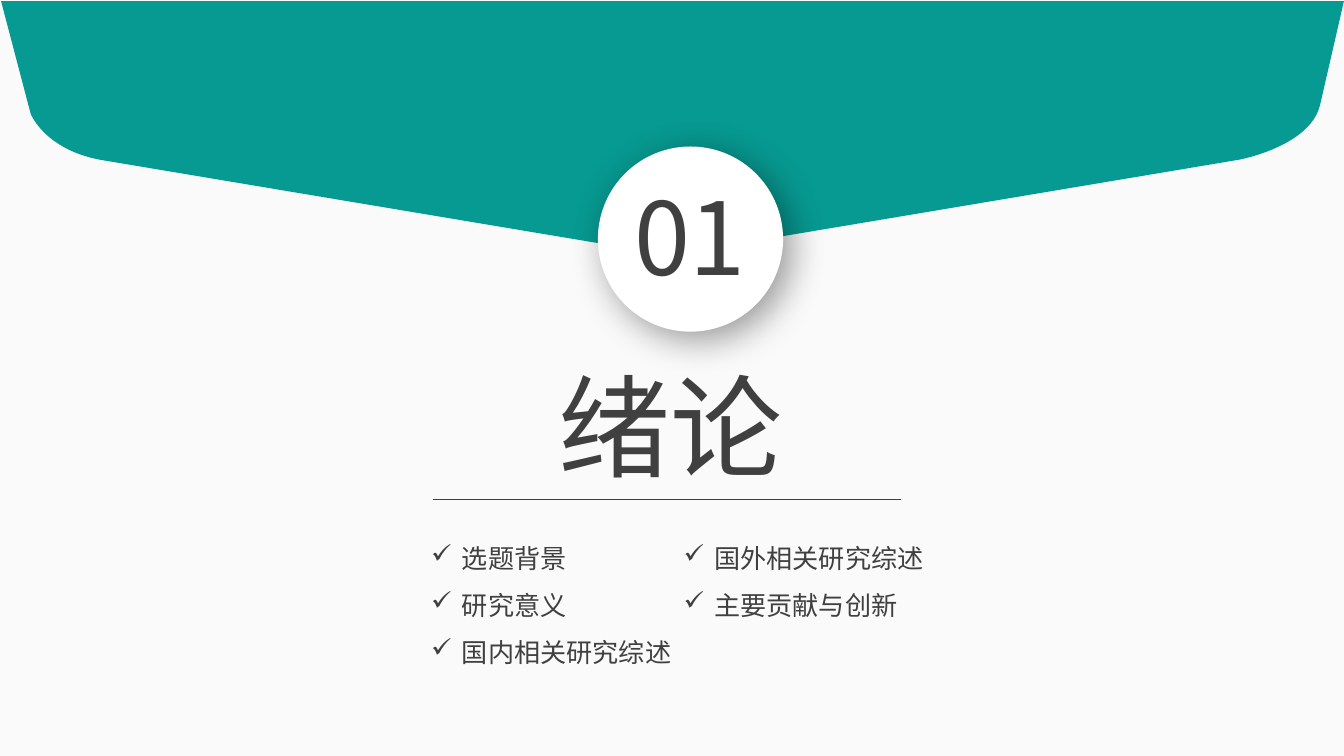
from dataclasses import dataclass

from lxml.etree import SubElement
from pptx import Presentation
from pptx.dml.color import RGBColor
from pptx.enum.shapes import MSO_CONNECTOR, MSO_SHAPE
from pptx.enum.text import MSO_AUTO_SIZE, PP_ALIGN
from pptx.oxml.ns import qn
from pptx.slide import Slide
from pptx.util import Cm, Pt

TEAL = RGBColor(0x07, 0x9A, 0x92)
WHITE = RGBColor(0xFF, 0xFF, 0xFF)
DARK_GREY = RGBColor(0x40, 0x40, 0x40)
PALE_GREY = RGBColor(0xFA, 0xFA, 0xFA)
FONT_NAME = "Noto Sans CJK SC"

Point = tuple[float, float]


@dataclass(frozen=True)
class Box:
    """Position and size in centimetres."""
    left: float
    top: float
    width: float
    height: float


@dataclass(frozen=True)
class TopicList:
    box: Box
    topics: tuple[str, ...]


@dataclass(frozen=True)
class RoundedCorner:
    """A curve that leaves its start straight towards the control point."""
    start: Point
    control: Point
    end: Point


TOPIC_LISTS = (
    TopicList(Box(7.9, 9.83, 5.16, 2.95), ("选题背景", "研究意义", "国内相关研究综述")),
    TopicList(Box(12.67, 9.83, 5.16, 2.06), ("国外相关研究综述", "主要贡献与创新")),
)
BANNER_TOP_LEFT = (0.02, 0.02)
BANNER_TOP_RIGHT = (25.4, 0.02)
BANNER_CORNERS = (
    RoundedCorner((0.58, 2.15), (0.86, 2.87), (2.0, 3.04)),
    RoundedCorner((11.5, 4.63), (12.58, 4.82), (13.82, 4.63)),
    RoundedCorner((23.42, 3.02), (24.77, 2.77), (24.95, 1.98)),
)


def corner_points(corner: RoundedCorner, steps: int = 24) -> list[Point]:
    """Sample a cubic curve whose first control point is its start."""
    points = []
    for step in range(steps + 1):
        t = step / steps
        weights = ((1 - t) ** 3 + 3 * t * (1 - t) ** 2, 3 * t**2 * (1 - t), t**3)
        anchors = (corner.start, corner.control, corner.end)
        points.append((
            sum(weight * anchor[0] for weight, anchor in zip(weights, anchors)),
            sum(weight * anchor[1] for weight, anchor in zip(weights, anchors)),
        ))
    return points


def add_banner(slide: Slide) -> None:
    points = [point for corner in BANNER_CORNERS for point in corner_points(corner)]
    points.append(BANNER_TOP_RIGHT)
    builder = slide.shapes.build_freeform(*(Cm(value) for value in BANNER_TOP_LEFT))
    builder.add_line_segments([(Cm(x), Cm(y)) for x, y in points], close=True)
    shape = builder.convert_to_shape()
    shape.shadow.inherit = False
    shape.fill.solid()
    shape.fill.fore_color.rgb = TEAL
    shape.line.fill.background()


def add_number_disc(slide: Slide, left: float, top: float, diameter: float) -> None:
    shape = slide.shapes.add_shape(
        MSO_SHAPE.OVAL, Cm(left), Cm(top), Cm(diameter), Cm(diameter))
    shape.fill.solid()
    shape.fill.fore_color.rgb = WHITE
    shape.line.fill.background()
    # Soft shadow towards the lower right
    shape.shadow.inherit = False
    effects = shape._element.spPr.find(qn("a:effectLst"))
    shadow = SubElement(
        effects, qn("a:outerShdw"), blurRad=str(Pt(20)), dist=str(Pt(6)),
        dir=str(45 * 60000), algn="tl", rotWithShape="0")
    color = SubElement(shadow, qn("a:srgbClr"), val="000000")
    SubElement(color, qn("a:alpha"), val="40000")


def add_text(
    slide: Slide,
    box: Box,
    *lines: str,
    size: int,
    alignment: PP_ALIGN = PP_ALIGN.LEFT,
    wrap: bool = True,
    line_spacing: float | None = None,
    bullet: str | None = None,
) -> None:
    shape = slide.shapes.add_textbox(
        Cm(box.left), Cm(box.top), Cm(box.width), Cm(box.height))
    frame = shape.text_frame
    frame.word_wrap = wrap
    frame.auto_size = MSO_AUTO_SIZE.SHAPE_TO_FIT_TEXT
    for index, line in enumerate(lines):
        paragraph = frame.add_paragraph() if index else frame.paragraphs[0]
        paragraph.alignment = alignment
        paragraph.line_spacing = line_spacing
        if bullet:
            properties = paragraph._p.get_or_add_pPr()
            properties.set("marL", str(Cm(0.58)))
            properties.set("indent", str(Cm(-0.58)))
            SubElement(properties, qn("a:buChar"), char=bullet)
        run = paragraph.add_run()
        run.text = line
        run.font.size = Pt(size)
        run.font.name = FONT_NAME
        run.font.color.rgb = DARK_GREY
        SubElement(run._r.get_or_add_rPr(), qn("a:ea"), typeface=FONT_NAME)


def add_rule(slide: Slide, left: float, right: float, top: float) -> None:
    connector = slide.shapes.add_connector(
        MSO_CONNECTOR.STRAIGHT, Cm(left), Cm(top), Cm(right), Cm(top))
    connector.line.color.rgb = DARK_GREY
    connector.line.width = Pt(0.5)
    SubElement(connector._element.spPr, qn("a:effectLst"))


def main() -> None:
    presentation = Presentation()
    presentation.slide_width = Cm(25.4)
    presentation.slide_height = Cm(14.29)
    slide = presentation.slides.add_slide(presentation.slide_layouts[6])
    slide.background.fill.solid()
    slide.background.fill.fore_color.rgb = PALE_GREY

    # Banner with the chapter number
    add_banner(slide)
    add_number_disc(slide, left=11.3, top=2.77, diameter=3.5)
    add_text(slide, Box(11.48, 3.18, 3.12, 2.57), "01", size=54,
             alignment=PP_ALIGN.CENTER)

    # Chapter title and its topics
    add_text(slide, Box(10.31, 6.63, 4.78, 2.82), "绪论", size=60, wrap=False)
    for topic_list in TOPIC_LISTS:
        add_text(slide, topic_list.box, *topic_list.topics, size=14,
                 line_spacing=1.5, bullet="✓")
    add_rule(slide, left=8.18, right=17.02, top=9.44)

    presentation.save("out.pptx")


if __name__ == "__main__":
    main()
